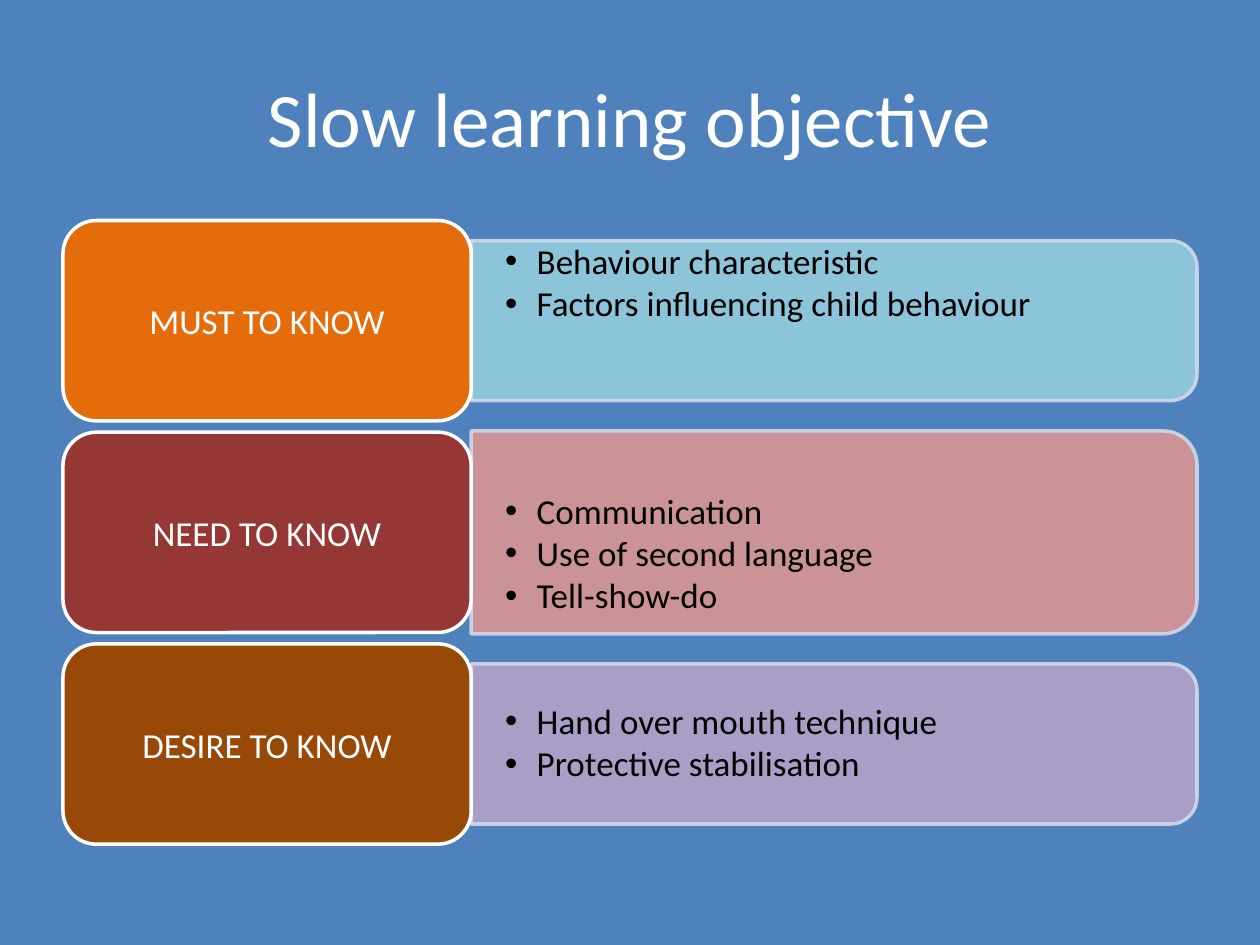
"""Build the slow learning objective slide: three knowledge tiers with their topics."""
from dataclasses import dataclass

from lxml.etree import SubElement
from pptx import Presentation
from pptx.dml.color import RGBColor
from pptx.enum.shapes import MSO_SHAPE as Preset
from pptx.enum.text import MSO_ANCHOR as Anchor, PP_ALIGN as Align
from pptx.oxml.ns import qn
from pptx.util import Inches, Pt


@dataclass(frozen=True)
class Theme:
    font: str = "Calibri"
    title_size: float = 44
    body_size: float = 20
    line_width: float = 2
    line_spacing: float = 0.9
    topic_gap: float = 2.6
    opacity: int = 90
    background: str = "4F81BD"
    light: str = "FFFFFF"
    dark: str = "000000"
    panel_edge: str = "D0D8E8"


@dataclass(frozen=True)
class Grid:
    width: float = 10
    height: float = 7.5
    margin: float = 0.5
    title_top: float = 0.3
    title_height: float = 1.25
    top: float = 1.75
    row_pitch: float = 1.68
    card_height: float = 1.59
    card_share: float = 0.36

    @property
    def content_width(self) -> float:
        return self.width - 2 * self.margin

    @property
    def card_width(self) -> float:
        return self.content_width * self.card_share

    @property
    def panel_left(self) -> float:
        return self.margin + self.card_width

    @property
    def panel_width(self) -> float:
        return self.content_width - self.card_width

    def row_center(self, row: int) -> float:
        return self.top + row * self.row_pitch + self.card_height / 2


@dataclass(frozen=True)
class Tier:
    label: str
    topics: tuple[str, ...]
    card_color: str
    panel_color: str
    panel_height: float = 1.27
    topic_shift: float = 0


THEME = Theme()
GRID = Grid()
TIERS = (
    Tier("MUST TO KNOW", ("Behaviour characteristic", "Factors influencing child behaviour"),
         "E46C0A", "93CDDD", topic_shift=-0.29),
    Tier("NEED TO KNOW", ("Communication", "Use of second language", "Tell-show-do"),
         "953735", "D99694", panel_height=1.61, topic_shift=0.18),
    Tier("DESIRE TO KNOW", ("Hand over mouth technique", "Protective stabilisation"),
         "984807", "B3A2C7"),
)


def style_text(paragraph, size: float, color: str) -> None:
    for run in paragraph.runs:
        run.font.name = THEME.font
        run.font.size = Pt(size)
        run.font.color.rgb = RGBColor.from_string(color)


def write_centered(frame, text: str, size: float) -> None:
    frame.word_wrap = True
    frame.vertical_anchor = Anchor.MIDDLE
    frame.text = text
    frame.paragraphs[0].alignment = Align.CENTER
    style_text(frame.paragraphs[0], size, THEME.light)


def add_block(slide, preset, box: tuple[float, ...], fill: str, edge: str):
    block = slide.shapes.add_shape(preset, *map(Inches, box))
    block.shadow.inherit = False
    block.fill.solid()
    block.fill.fore_color.rgb = RGBColor.from_string(fill)
    block.line.color.rgb = RGBColor.from_string(edge)
    block.line.width = Pt(THEME.line_width)
    return block


def add_panel(slide, tier: Tier, center: float) -> None:
    middle = GRID.panel_left + GRID.panel_width / 2
    box = (middle - tier.panel_height / 2, center - GRID.panel_width / 2,
           tier.panel_height, GRID.panel_width)
    panel = add_block(slide, Preset.ROUND_2_SAME_RECTANGLE, box,
                      tier.panel_color, THEME.panel_edge)
    panel.rotation = 90
    for color in panel.element.spPr.iter(qn("a:srgbClr")):
        SubElement(color, qn("a:alpha"), val=str(THEME.opacity * 1000))


def add_bullet(paragraph, indent: float) -> None:
    properties = paragraph._p.get_or_add_pPr()
    properties.set("marL", str(Inches(indent)))
    properties.set("indent", str(-Inches(indent)))
    SubElement(properties, qn("a:buFont"), typeface="Arial")
    SubElement(properties, qn("a:buChar"), char="•")


def add_topics(slide, tier: Tier, center: float) -> None:
    top = center + tier.topic_shift - tier.panel_height / 2
    box = (GRID.panel_left, top, GRID.panel_width, tier.panel_height)
    frame = slide.shapes.add_textbox(*map(Inches, box)).text_frame
    frame.word_wrap = True
    frame.vertical_anchor = Anchor.MIDDLE
    frame.margin_left = frame.margin_right = Inches(0.27)
    frame.margin_top = frame.margin_bottom = Inches(0.14)
    frame.text = "\n".join(tier.topics)
    for topic in frame.paragraphs:
        add_bullet(topic, 0.25)
        topic.line_spacing = THEME.line_spacing
        topic.space_after = Pt(THEME.topic_gap)
        style_text(topic, THEME.body_size, THEME.dark)


def add_card(slide, tier: Tier, center: float) -> None:
    box = (GRID.margin, center - GRID.card_height / 2, GRID.card_width, GRID.card_height)
    card = add_block(slide, Preset.ROUNDED_RECTANGLE, box, tier.card_color, THEME.light)
    write_centered(card.text_frame, tier.label, THEME.body_size)


def add_title(slide, text: str) -> None:
    box = (GRID.margin, GRID.title_top, GRID.content_width, GRID.title_height)
    title = slide.shapes.add_textbox(*map(Inches, box))
    write_centered(title.text_frame, text, THEME.title_size)


def main() -> None:
    deck = Presentation()
    deck.slide_width, deck.slide_height = Inches(GRID.width), Inches(GRID.height)
    slide = deck.slides.add_slide(deck.slide_layouts[6])
    slide.background.fill.solid()
    slide.background.fill.fore_color.rgb = RGBColor.from_string(THEME.background)
    add_title(slide, "Slow learning objective")
    for row, tier in enumerate(TIERS):
        center = GRID.row_center(row)
        add_panel(slide, tier, center)
        add_topics(slide, tier, center)
        add_card(slide, tier, center)
    deck.save("out.pptx")


if __name__ == "__main__":
    main()
